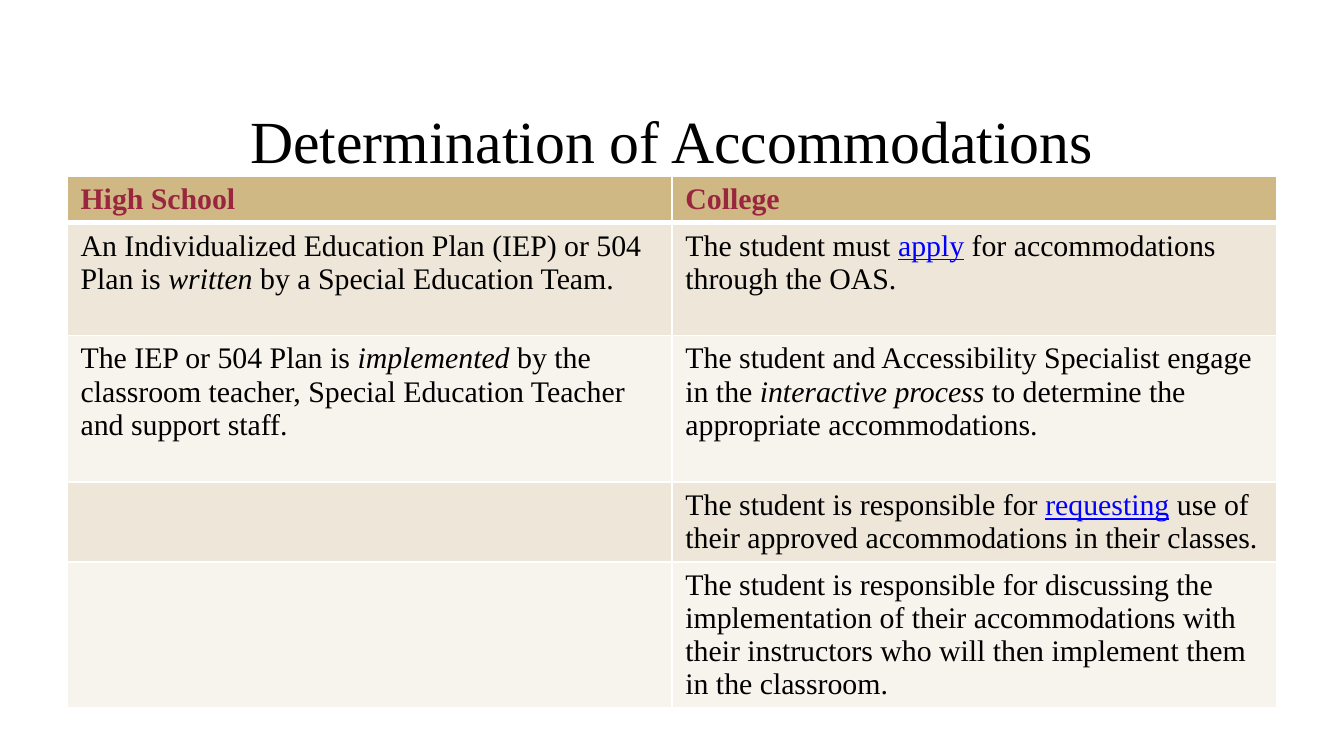
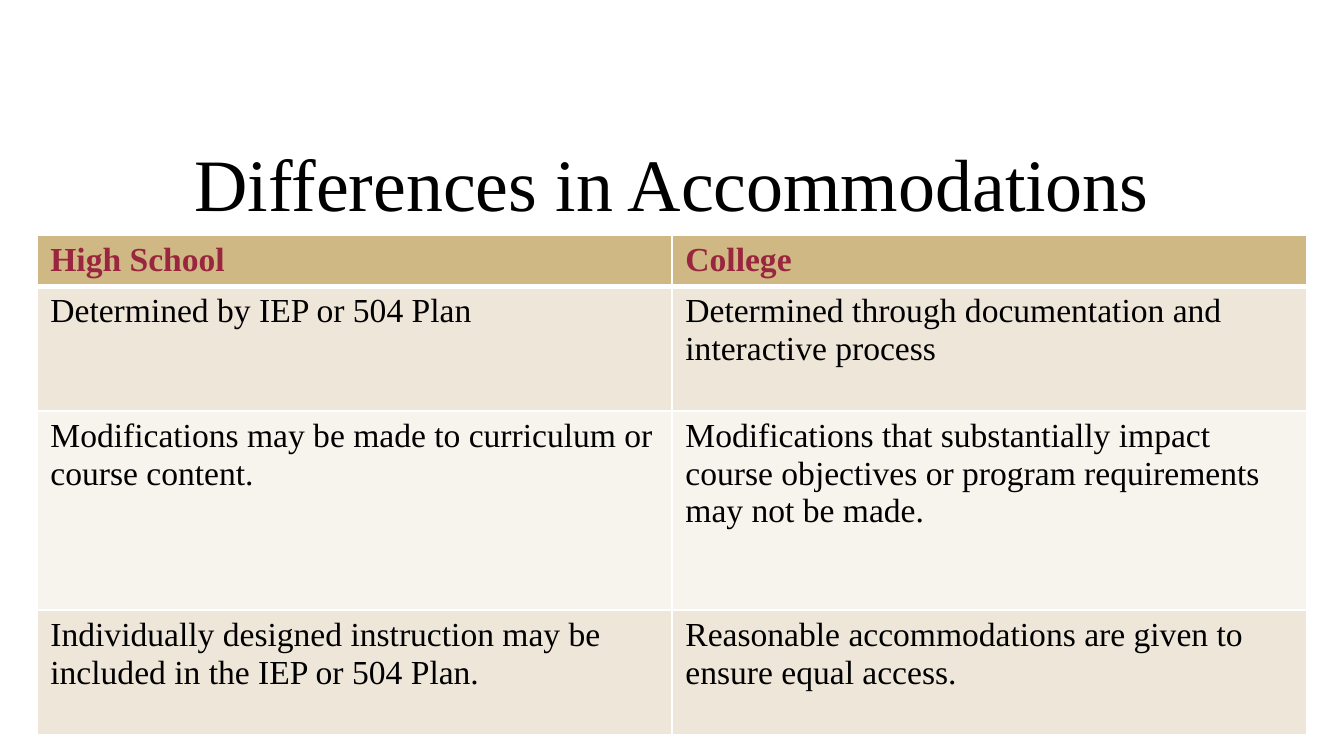
from dataclasses import dataclass

from lxml import etree
from pptx import Presentation, util as u
from pptx.dml.color import RGBColor
from pptx.enum import text
from pptx.oxml import ns


@dataclass(frozen=True)
class Theme:
    font: str = "Times New Roman"
    ink: str = "000000"
    heading: str = "99263E"
    link: str = "0000FF"
    gold: str = "D0B884"
    bands: tuple = ("EEE6D9", "F7F3ED")
    rule: str = "FFFFFF"
    thin: int = 1
    thick: int = 3
    title_sizes: tuple = (32, 39.6)
    table_sizes: tuple = (16, 18)


theme = Theme()
PX = 4572
PLAIN, ITALIC, LINK, HEADING = "plain", "italic", "link", "heading"
HEADINGS = ("High School", "College")


def style_span(span, size, kind=PLAIN):
    colors = {LINK: theme.link, HEADING: theme.heading}
    span.font.name = theme.font
    span.font.size = u.Pt(size)
    span.font.color.rgb = RGBColor.from_string(colors.get(kind, theme.ink))
    span.font.bold = kind == HEADING
    span.font.italic = kind == ITALIC
    span.font.underline = kind == LINK


def rule_cell(cell):
    properties = cell._tc.get_or_add_tcPr()
    for side in "LRTB":
        weight = theme.thick if side == "B" else theme.thin
        line = etree.SubElement(properties, ns.qn(f"a:ln{side}"), w=str(u.Pt(weight)))
        fill = etree.SubElement(line, ns.qn("a:solidFill"))
        etree.SubElement(fill, ns.qn("a:srgbClr"), val=theme.rule)


pages = [
    {
        "title": "Determination of Accommodations",
        "title_top": 128,
        "table_at": (100, 262),
        "table_height": 820,
        "column": 900,
        "heights": (68, 168, 218, 118, 168),
        "rows": [
            (
                [
                    ("An Individualized Education Plan (IEP) or 504 Plan is ", PLAIN),
                    ("written", ITALIC),
                    (" by a Special Education Team.", PLAIN),
                ],
                [
                    ("The student must ", PLAIN),
                    ("apply", LINK),
                    (" for accommodations through the OAS.", PLAIN),
                ],
            ),
            (
                [
                    ("The IEP or 504 Plan is ", PLAIN),
                    ("implemented", ITALIC),
                    (" by the classroom teacher, Special Education Teacher and support staff.", PLAIN),
                ],
                [
                    ("The student and Accessibility Specialist engage in the ", PLAIN),
                    ("interactive process ", ITALIC),
                    ("to determine the appropriate accommodations.", PLAIN),
                ],
            ),
            (
                [],
                [
                    ("The student is responsible for ", PLAIN),
                    ("requesting", LINK),
                    (" use of their approved accommodations in their classes.", PLAIN),
                ],
            ),
            (
                [],
                [
                    (
                        "The student is responsible for discussing the implementation of their "
                        "accommodations with their instructors who will then implement them in the classroom.",
                        PLAIN,
                    )
                ],
            ),
        ],
    },
    {
        "title": "Differences in Accommodations",
        "title_top": 191,
        "table_at": (55, 350),
        "table_height": 748,
        "column": 945,
        "heights": (76, 186, 296, 186),
        "rows": [
            (
                [("Determined by IEP or 504 Plan", PLAIN)],
                [("Determined through documentation and interactive process", PLAIN)],
            ),
            (
                [("Modifications may be made to curriculum or course content.", PLAIN)],
                [
                    (
                        "Modifications that substantially impact course objectives "
                        "or program requirements may not be made.",
                        PLAIN,
                    )
                ],
            ),
            (
                [("Individually designed instruction may be included in the IEP or 504 Plan.", PLAIN)],
                [("Reasonable accommodations are given to ensure equal access.", PLAIN)],
            ),
        ],
    },
]

deck = Presentation()
deck.slide_width, deck.slide_height = 2000 * PX, 1125 * PX

for content, title_size, table_size in zip(pages, theme.title_sizes, theme.table_sizes):
    page = deck.slides.add_slide(deck.slide_layouts.get_by_name("Title Only"))

    title = page.shapes.title
    title.left, title.top = 100 * PX, content["title_top"] * PX
    title.width, title.height = 1800 * PX, 160 * PX
    frame = title.text_frame
    frame.text = content["title"]
    frame.auto_size = text.MSO_AUTO_SIZE.NONE
    frame.vertical_anchor = text.MSO_ANCHOR.MIDDLE
    para = frame.paragraphs[0]
    para.alignment = text.PP_ALIGN.CENTER
    style_span(para.runs[0], title_size)

    rows = [[[(heading, HEADING)] for heading in HEADINGS], *content["rows"]]
    left, top = content["table_at"]
    width = content["column"] * len(HEADINGS)
    holder = page.shapes.add_table(
        len(rows), len(HEADINGS), left * PX, top * PX, width * PX, content["table_height"] * PX
    )
    table = holder.table

    for index, (cells, height) in enumerate(zip(rows, content["heights"])):
        table.rows[index].height = height * PX
        for position, pieces in enumerate(cells):
            cell = table.cell(index, position)
            if index == 0:
                rule_cell(cell)
            cell.fill.solid()
            color = theme.gold if index == 0 else theme.bands[(index - 1) % 2]
            cell.fill.fore_color.rgb = RGBColor.from_string(color)
            para = cell.text_frame.paragraphs[0]
            for words, kind in pieces:
                span = para.add_run()
                span.text = words
                style_span(span, table_size, kind)
    holder.height = content["table_height"] * PX

deck.save("out.pptx")
